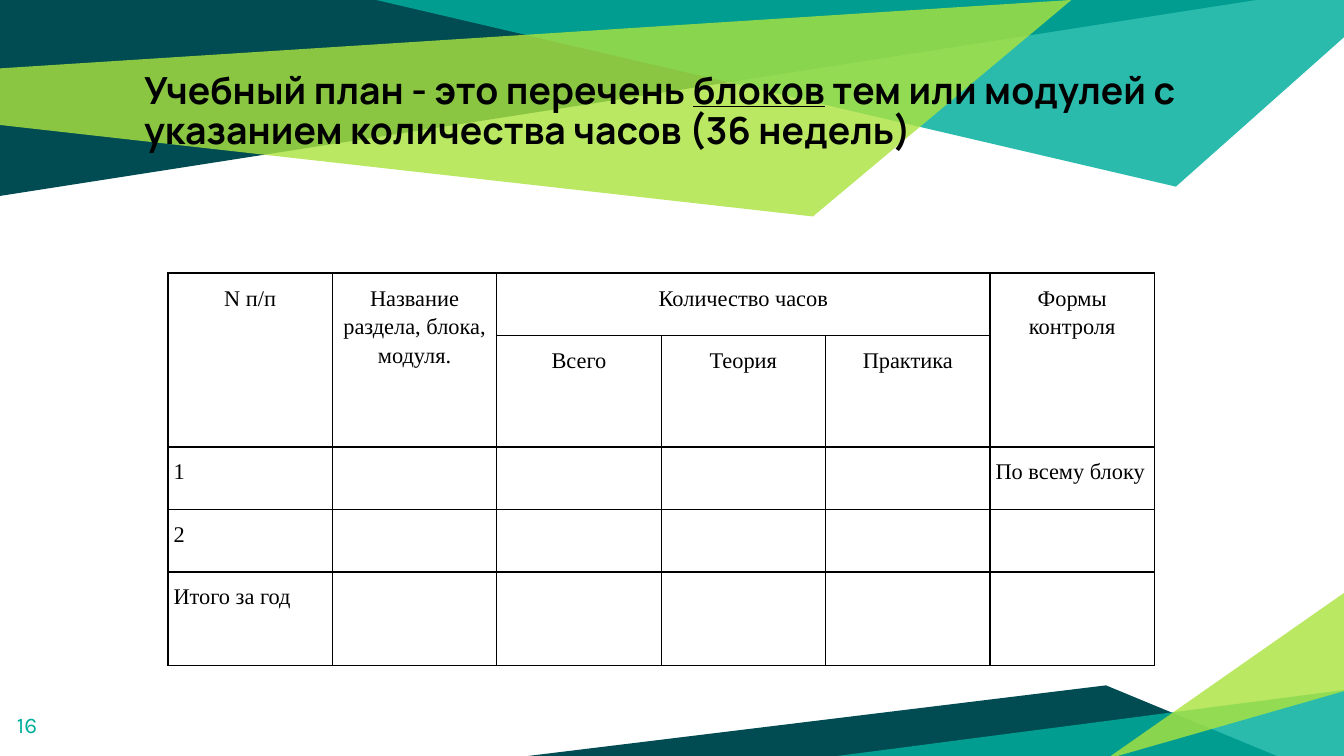
from lxml.etree import SubElement
from pptx import Presentation
from pptx.dml.color import RGBColor
from pptx.enum.text import MSO_ANCHOR, PP_ALIGN
from pptx.oxml.ns import qn
from pptx.util import Pt

THEME = {
    "dark": "004C52", "teal": "00AE9D", "lime": "ABE33F", "ink": "000000",
    "title": ("Manrope", 20), "number": ("Karla", 12),
    "table": ("Times New Roman", 12), "border": 0.75,
}

# Background facets: colour, opacity in percent, corner points
FACETS = [
    ("dark", 100, [(0, 0), (0, 105), (673, 0)]),
    ("teal", 83, [(201.5, 0), (630, 100), (720, 20), (720, 0)]),
    ("lime", 81, [(-0.5, 36.7), (0, 67), (435.5, 116), (574, 0)]),
    ("dark", 100, [(283, 405), (684, 405), (592.5, 367.2)]),
    ("teal", 83, [(721.5, 369.5), (721.5, 406.8), (435, 406.8)]),
    ("lime", 81, [(721, 370), (721, 317), (592.5, 406.8)]),
]
# Title runs: text, underlined
TITLE = [
    ("Учебный план - это перечень ", False),
    ("блоков", True),
    (" тем или модулей с указанием количества часов (36 недель)", False),
]
PAGE = "16"
ROWS = [
    ["N п/п", "Название раздела, блока, модуля.", "Количество часов", "", "",
     "Формы контроля"],
    ["", "", "Всего", "Теория", "Практика", ""],
    ["1", "", "", "", "", "По всему блоку"],
    ["2", "", "", "", "", ""],
    ["Итого за год", "", "", "", "", ""],
]
HEADER_ROWS = 2
MERGES = [((0, 0), (1, 0)), ((0, 1), (1, 1)), ((0, 2), (0, 4)), ((0, 5), (1, 5))]
ROW_HEIGHTS = [33.5, 35.5, 33.5, 33.5, 50]
COL_WIDTH = 88.1
TABLE_LEFT, TABLE_TOP = 90, 146.3


def color(name):
    return RGBColor.from_string(THEME[name])


def style(font, kind, ink="ink"):
    name, size = THEME[kind]
    font.name, font.size = name, Pt(size)
    font.color.rgb = color(ink)


def add_facet(shapes, fill, opacity, points):
    corners = [(Pt(x), Pt(y)) for x, y in points]
    fb = shapes.build_freeform(*corners[0])
    fb.add_line_segments(corners[1:], close=True)
    sp = fb.convert_to_shape()
    sp.shadow.inherit = False
    sp.line.fill.background()
    sp.fill.solid()
    sp.fill.fore_color.rgb = color(fill)
    if opacity < 100:
        clr = sp.fill._xPr.find(qn("a:solidFill"))[0]
        SubElement(clr, qn("a:alpha"), val=str(opacity * 1000))


def add_borders(cell):
    tc_pr = cell._tc.get_or_add_tcPr()
    for i, side in enumerate(("lnL", "lnR", "lnT", "lnB")):
        ln = tc_pr.makeelement(qn(f"a:{side}"), w=str(Pt(THEME["border"])))
        tc_pr.insert(i, ln)
        fill = SubElement(ln, qn("a:solidFill"))
        SubElement(fill, qn("a:srgbClr"), val=THEME["ink"])


def fill_title(sp):
    sp.left, sp.top, sp.width, sp.height = Pt(70), Pt(31.5), Pt(580), Pt(81)
    tf = sp.text_frame
    tf.vertical_anchor = MSO_ANCHOR.TOP
    tf.margin_left = tf.margin_right = tf.margin_top = tf.margin_bottom = Pt(7.2)
    p = tf.paragraphs[0]
    p.alignment, p.line_spacing = PP_ALIGN.LEFT, 0.9
    style(p.font, "title")
    p.font.bold = True
    for text, underlined in TITLE:
        r = p.add_run()
        r.text = text
        if underlined:
            r.font.underline = True


def add_page_number(shapes):
    tf = shapes.add_textbox(Pt(2), Pt(373.7), Pt(43), Pt(31)).text_frame
    tf.word_wrap = True
    tf.margin_left = tf.margin_right = tf.margin_top = tf.margin_bottom = Pt(7.2)
    p = tf.paragraphs[0]
    p.text = PAGE
    style(p.font, "number", "teal")


def add_plan(shapes):
    cols = len(ROWS[0])
    table = shapes.add_table(len(ROWS), cols, Pt(TABLE_LEFT), Pt(TABLE_TOP),
                             Pt(COL_WIDTH * cols), Pt(sum(ROW_HEIGHTS))).table
    table.first_row = table.horz_banding = False
    for col in table.columns:
        col.width = Pt(COL_WIDTH)
    for row, height in zip(table.rows, ROW_HEIGHTS):
        row.height = Pt(height)
    for start, end in MERGES:
        table.cell(*start).merge(table.cell(*end))
    for i, texts in enumerate(ROWS):
        for j, text in enumerate(texts):
            cell = table.cell(i, j)
            cell.fill.background()
            add_borders(cell)
            cell.margin_left = cell.margin_right = Pt(3)
            cell.margin_top = cell.margin_bottom = Pt(5)
            p = cell.text_frame.paragraphs[0]
            if text:
                p.text = text
            p.line_spacing = 1.15
            p.alignment = PP_ALIGN.CENTER if i < HEADER_ROWS else PP_ALIGN.LEFT
            style(p.font, "table")


def main():
    prs = Presentation()
    prs.slide_width, prs.slide_height = Pt(720), Pt(405)
    s = prs.slides.add_slide(prs.slide_layouts[5])
    title = s.shapes.title
    for facet in FACETS:
        add_facet(s.shapes, *facet)
    s.shapes._spTree.append(title._element)  # bring the title above the facets
    fill_title(title)
    add_page_number(s.shapes)
    add_plan(s.shapes)
    prs.save("out.pptx")


if __name__ == "__main__":
    main()
